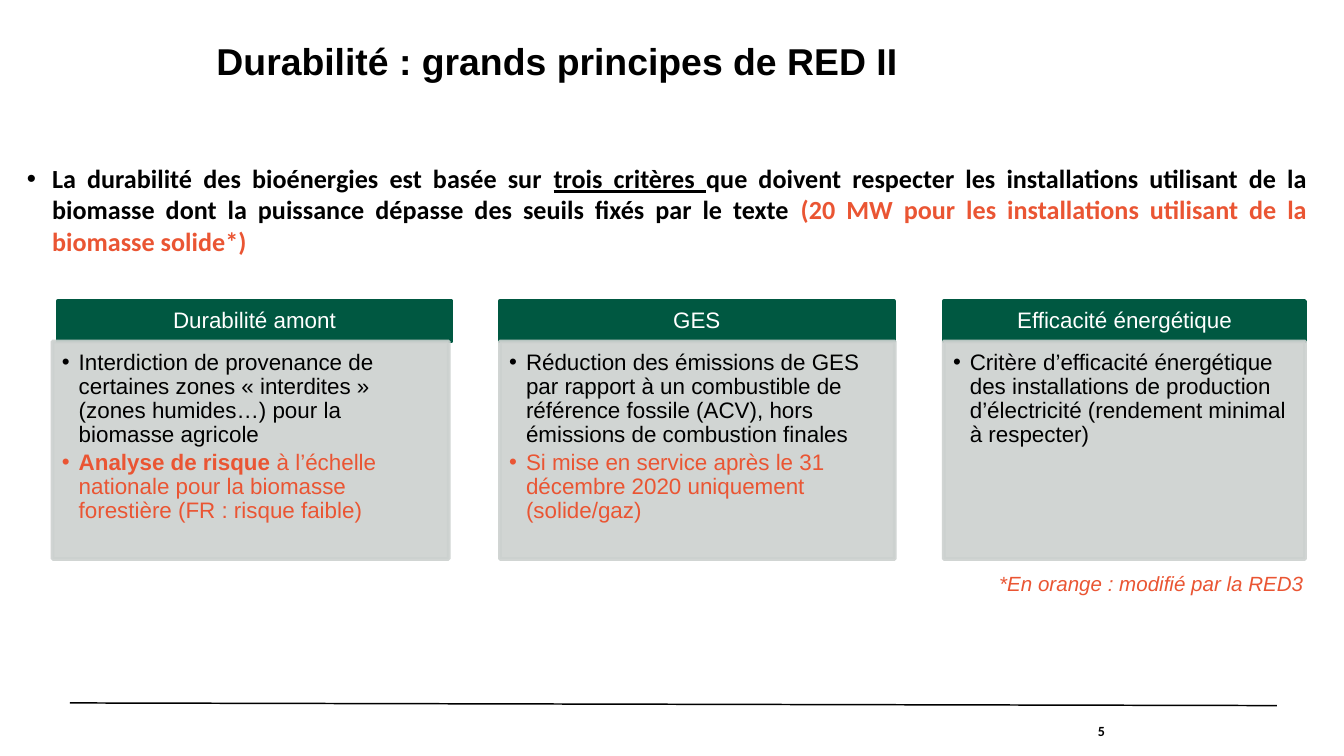
from lxml import etree
from pptx import Presentation
from pptx.dml.color import RGBColor
from pptx.enum.shapes import MSO_CONNECTOR, MSO_SHAPE
from pptx.enum.text import MSO_ANCHOR, PP_ALIGN
from pptx.oxml.ns import qn
from pptx.util import Pt

BLACK = RGBColor(0x00, 0x00, 0x00)
WHITE = RGBColor(0xFF, 0xFF, 0xFF)
GREEN = RGBColor(0x00, 0x58, 0x41)
GREY = RGBColor(0xCC, 0xD1, 0xCF)
ORANGE = RGBColor(0xEA, 0x55, 0x33)

LEFT, CENTER, RIGHT, JUSTIFY = (
    PP_ALIGN.LEFT, PP_ALIGN.CENTER, PP_ALIGN.RIGHT, PP_ALIGN.JUSTIFY)
TOP, MIDDLE = MSO_ANCHOR.TOP, MSO_ANCHOR.MIDDLE
RECTANGLE, STRAIGHT = MSO_SHAPE.RECTANGLE, MSO_CONNECTOR.STRAIGHT

HEADER_TOP, HEADER_HEIGHT = 161.3, 21.6
PANEL_TOP, PANEL_HEIGHT = 182.9, 116.6

# Header left and width, panel left and width, title,
# then paragraphs as (colour, [(text, bold)])
CRITERIA = [
    (30.9, 211, 28.2, 212.2, "Durabilité amont", [
        (BLACK, [("Interdiction de provenance de certaines zones "
                  "«\u00a0interdites\u00a0» (zones humides…) pour la "
                  "biomasse agricole", False)]),
        (ORANGE, [("Analyse de risque ", True),
                  ("à l’échelle nationale pour la biomasse forestière "
                   "(FR : risque faible)", False)]),
    ]),
    (267.8, 211, 267.8, 211.6, "GES", [
        (BLACK, [("Réduction des émissions de GES par rapport à un "
                  "combustible de référence fossile (ACV), hors émissions "
                  "de combustion finales", False)]),
        (ORANGE, [("Si mise en service après le 31 décembre 2020 uniquement "
                   "(solide/gaz)", False)]),
    ]),
    (505.8, 193.3, 505.6, 193.6, "Efficacité énergétique", [
        (BLACK, [("Critère d’efficacité énergétique des installations de "
                  "production d’électricité (rendement minimal à respecter)",
                  False)]),
    ]),
]


def set_frame(shape, margins, anchor=TOP):
    """Prepare a wrapping text frame; margins are left, top, right, bottom."""
    frame = shape.text_frame
    frame.word_wrap = True
    frame.vertical_anchor = anchor
    (frame.margin_left, frame.margin_top,
     frame.margin_right, frame.margin_bottom) = map(Pt, margins)
    return frame


def set_font(font, size, color, name="Arial", bold=None, italic=None):
    font.size, font.name, font.bold, font.italic = Pt(size), name, bold, italic
    font.color.rgb = color


def add_bullet(para, indent):
    properties = para._p.get_or_add_pPr()
    properties.set("marL", str(Pt(indent)))
    properties.set("indent", str(-Pt(indent)))
    etree.SubElement(properties, qn("a:buFont"), typeface="Arial")
    etree.SubElement(properties, qn("a:buChar"), char="•")


def add_line_of_text(page, bounds, text, align, margins=(0, 0, 0, 0),
                     anchor=TOP, spacing=None, **font):
    box = page.shapes.add_textbox(*map(Pt, bounds))
    para = set_frame(box, margins, anchor).paragraphs[0]
    para.text = text
    para.alignment = align
    para.line_spacing = spacing
    set_font(para.font, **font)


def add_rectangle(page, bounds, color, opacity=None):
    shape = page.shapes.add_shape(RECTANGLE, *map(Pt, bounds))
    shape.shadow.inherit = False
    shape.fill.solid()
    shape.fill.fore_color.rgb = color
    shape.line.color.rgb = color
    shape.line.width = Pt(2)
    if opacity is not None:
        for tone in shape._element.spPr.iter(qn("a:srgbClr")):
            etree.SubElement(tone, qn("a:alpha"), val=str(opacity * 1000))
    return shape


def add_header(page, left, width, title):
    shape = add_rectangle(page, (left, HEADER_TOP, width, HEADER_HEIGHT), GREEN)
    para = set_frame(shape, (6.5, 3.6, 6.5, 3.6), MIDDLE).paragraphs[0]
    para.text = title
    para.alignment = CENTER
    para.line_spacing = 0.9
    set_font(para.font, 12, WHITE)


def add_panel(page, left, width, paragraphs):
    shape = add_rectangle(page, (left, PANEL_TOP, width, PANEL_HEIGHT), GREY, 90)
    frame = set_frame(shape, (5, 5, 6.5, 7.2))
    for index, (color, pieces) in enumerate(paragraphs):
        para = frame.add_paragraph() if index else frame.paragraphs[0]
        para.alignment = LEFT
        para.line_spacing = 0.9
        para.space_after = Pt(1.8)
        add_bullet(para, 9)
        set_font(para.font, 12, color)
        for text, bold in pieces:
            span = para.add_run()
            span.text = text
            if bold:
                span.font.bold = True


def add_introduction(page):
    box = page.shapes.add_textbox(Pt(14.4), Pt(87), Pt(686), Pt(51))
    para = set_frame(box, (0, 0, 0, 0)).paragraphs[0]
    para.alignment = JUSTIFY
    add_bullet(para, 13.5)
    set_font(para.font, 14, BLACK, "Calibri", bold=True)
    start, criteria, scope, threshold = [para.add_run() for _ in range(4)]
    start.text = "La durabilité des bioénergies est basée sur "
    criteria.text = "trois critères "
    criteria.font.underline = True
    scope.text = ("que doivent respecter les installations utilisant de la "
                  "biomasse dont la puissance dépasse des seuils fixés par "
                  "le texte ")
    threshold.text = ("(20 MW pour les installations utilisant de la "
                      "biomasse solide*)")
    threshold.font.color.rgb = ORANGE


def add_footer_line(page):
    line = page.shapes.add_connector(
        STRAIGHT, Pt(37.4), Pt(376.6), Pt(684), Pt(378))
    line.line.color.rgb = BLACK
    line.line.width = Pt(0.8)
    etree.SubElement(line._element.spPr, qn("a:effectLst"))


def main():
    deck = Presentation()
    deck.slide_width, deck.slide_height = Pt(720), Pt(405)
    page = deck.slides.add_slide(deck.slide_layouts[6])

    add_footer_line(page)
    add_line_of_text(page, (485.3, 378, 106.6, 27), "5", RIGHT, anchor=MIDDLE,
                     size=7.5, color=BLACK, name="Calibri", bold=True)
    add_introduction(page)
    add_line_of_text(page, (116, 23, 584, 28),
                     "Durabilité : grands principes de RED II", LEFT,
                     spacing=0.9, size=20, color=BLACK, bold=True)
    for (header_left, header_width, panel_left, panel_width,
         title, paragraphs) in CRITERIA:
        add_header(page, header_left, header_width, title)
        add_panel(page, panel_left, panel_width, paragraphs)
    add_line_of_text(page, (501.8, 302.4, 203.8, 20.9),
                     "*En orange : modifié par la RED3", RIGHT,
                     margins=(7.2, 3.6, 7.2, 3.6),
                     size=11, color=ORANGE, italic=True)
    deck.save("out.pptx")


if __name__ == "__main__":
    main()
